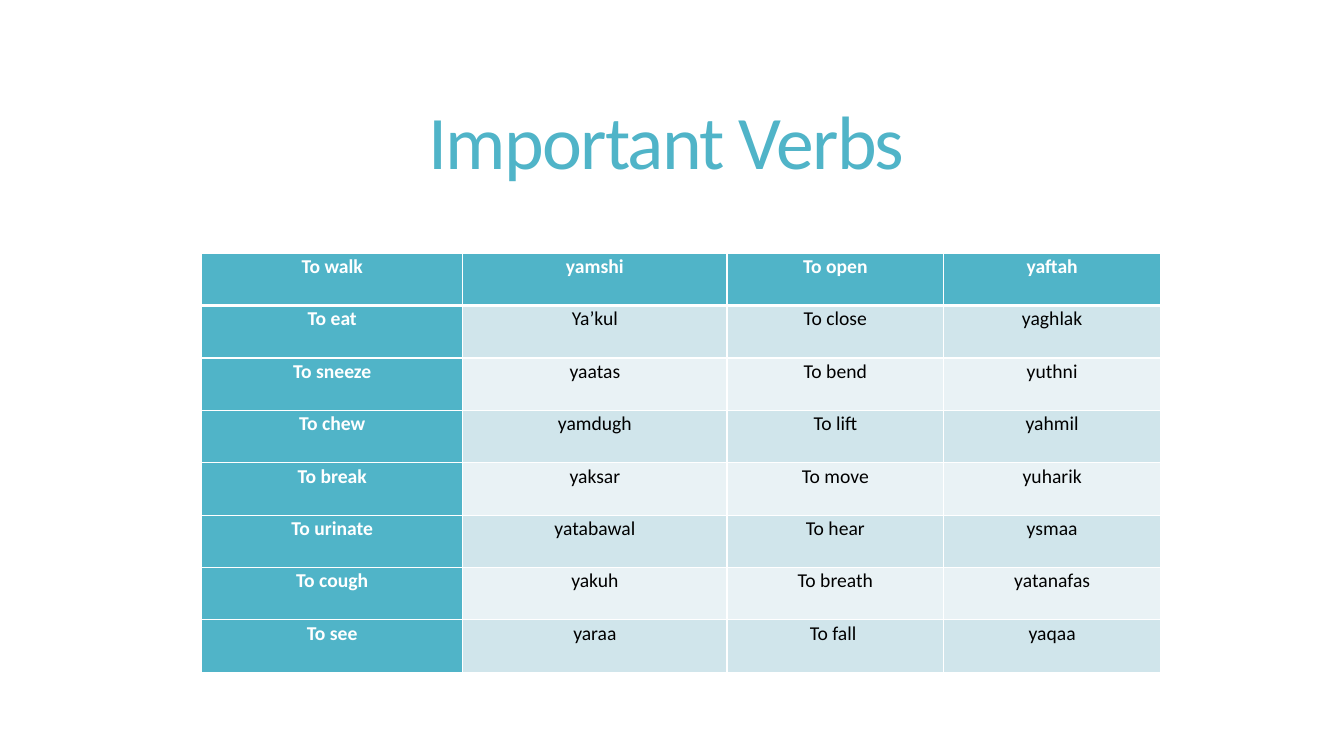
from lxml.etree import SubElement
from pptx import Presentation
from pptx.dml.color import RGBColor
from pptx.enum.text import MSO_ANCHOR, PP_ALIGN
from pptx.oxml import parse_xml
from pptx.oxml.ns import nsdecls
from pptx.util import Cm, Pt

TEAL, PALE, PALER, WHITE, BLACK = "50B4C8", "D0E5EB", "E9F2F5", "FFFFFF", "000000"
COLUMN_SHARES = [6.58, 6.65, 5.46, 5.46]
VERBS = [
    ["To walk", "yamshi", "To open", "yaftah"],
    ["To eat", "Ya’kul", "To close", "yaghlak"],
    ["To sneeze", "yaatas", "To bend", "yuthni"],
    ["To chew", "yamdugh", "To lift", "yahmil"],
    ["To break", "yaksar", "To move", "yuharik"],
    ["To urinate", "yatabawal", "To hear", "ysmaa"],
    ["To cough", "yakuh", "To breath", "yatanafas"],
    ["To see", "yaraa", "To fall ", "yaqaa"],
]


def color(value):
    return RGBColor.from_string(value)


def set_attrs(obj, values):
    for name, value in values.items():
        setattr(obj, name, value)


def write(tf, text, size, ink, bold, spacing):
    p = tf.paragraphs[0]
    set_attrs(p, {"alignment": PP_ALIGN.CENTER, "line_spacing": spacing})
    r = p.add_run()
    r.text = text
    set_attrs(r.font, {"name": "Calibri", "size": Pt(size), "bold": bold})
    r.font.color.rgb = color(ink)
    return r


def set_borders(cell, widths):
    tcPr = cell._tc.get_or_add_tcPr()
    for i, (side, width) in enumerate(widths.items()):
        ln = parse_xml(f'<a:{side} {nsdecls("a")} w="{Pt(width)}"><a:solidFill/></a:{side}>')
        SubElement(ln[0], ln[0].tag.replace("solidFill", "srgbClr"), val=WHITE)
        tcPr.insert(i, ln)


def add_title(s, left, top, width, height):
    sp = s.shapes.title
    set_attrs(sp, {"left": Cm(left), "top": Cm(top), "width": Cm(width), "height": Cm(height)})
    tf = sp.text_frame
    set_attrs(tf, {"word_wrap": True, "vertical_anchor": MSO_ANCHOR.MIDDLE})
    r = write(tf, "Important Verbs", 54, TEAL, False, 0.85)
    r.font._element.set("spc", "-120")


def add_verb_table(s, left, top, width, height):
    box = [Cm(v) for v in (left, top, width, height)]
    table = s.shapes.add_table(len(VERBS), len(COLUMN_SHARES), *box).table
    table.first_col = True
    for column, share in zip(table.columns, COLUMN_SHARES):
        column.width = Cm(width * share / sum(COLUMN_SHARES))
    for i, verbs in enumerate(VERBS):
        table.rows[i].height = Cm(height / len(VERBS))
        for j, verb in enumerate(verbs):
            cell = table.cell(i, j)
            header = i == 0 or j == 0
            set_attrs(cell, {"margin_left": Cm(0.18), "margin_right": Cm(0.18),
                             "margin_top": 0, "margin_bottom": 0,
                             "vertical_anchor": MSO_ANCHOR.TOP})
            cell.fill.solid()
            cell.fill.fore_color.rgb = color(TEAL if header else PALE if i % 2 else PALER)
            write(cell.text_frame, verb, 14, WHITE if header else BLACK, header, 1.07)
            set_borders(cell, {"lnL": 1, "lnR": 1, "lnT": 3 if i == 1 else 1,
                               "lnB": 3 if i == 0 else 1})


def main():
    prs = Presentation()
    set_attrs(prs, {"slide_width": Cm(33.87), "slide_height": Cm(19.05)})
    s = prs.slides.add_slide(prs.slide_layouts[5])
    add_title(s, 1.83, 1.4, 29.92, 4.6)
    add_verb_table(s, 5.08, 6.38, 24.17, 10.56)
    prs.save("out.pptx")


if __name__ == "__main__":
    main()
